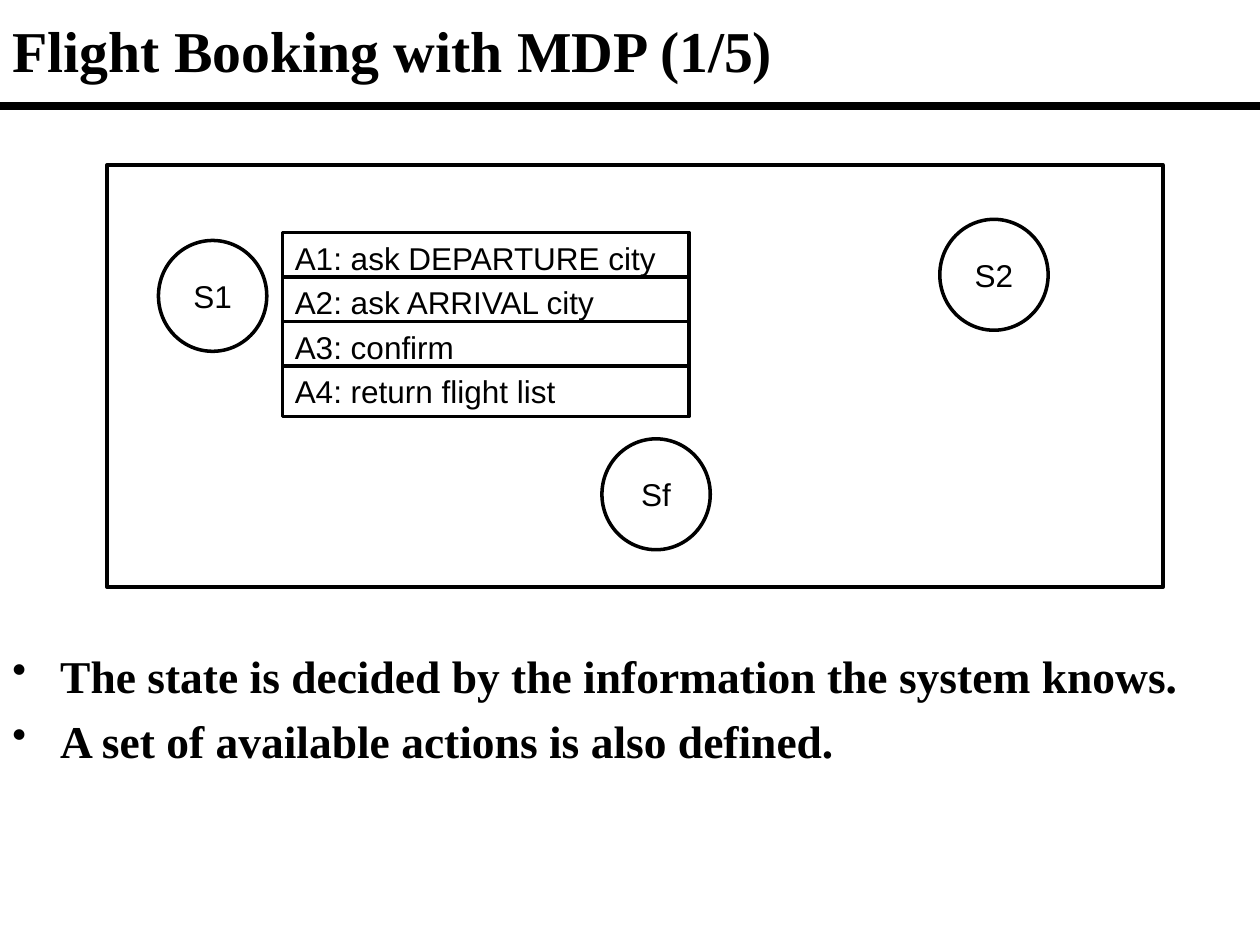
from lxml import etree
from pptx import Presentation
from pptx.dml.color import RGBColor
from pptx.enum.shapes import MSO_CONNECTOR, MSO_SHAPE
from pptx.enum.text import MSO_ANCHOR, PP_ALIGN
from pptx.oxml.ns import qn
from pptx.util import Inches, Pt

WIDTH, HEIGHT = 10, 7.5
BLACK, WHITE = "000000", "FFFFFF"
HEADING = {"name": "Times New Roman", "bold": True}
LABEL = {"name": "Arial", "size": Pt(18)}
ACTIONS = ["A1: ask DEPARTURE city", "A2: ask ARRIVAL city",
           "A3: confirm", "A4: return flight list"]
# Centre of each state, as shares of the diagram frame
STATES = {"S1": (0.1, 0.31), "Sf": (0.52, 0.78), "S2": (0.84, 0.26)}
BULLETS = ["The state is decided by the information the system knows.",
           "A set of available actions is also defined."]


def color(hex_string):
    return RGBColor.from_string(hex_string)


def write(paragraph, text, font_format):
    run = paragraph.add_run()
    run.text = text
    for name, value in font_format.items():
        setattr(run.font, name, value)
    run.font.color.rgb = color(BLACK)


def add_outlined(slide, kind, box, text="", align=PP_ALIGN.LEFT):
    shape = slide.shapes.add_shape(kind, *map(Inches, box))
    shape.shadow.inherit = False
    shape.fill.solid()
    shape.fill.fore_color.rgb = color(WHITE)
    shape.line.color.rgb = color(BLACK)
    shape.line.width = Pt(2)
    if text:
        frame = shape.text_frame
        frame.vertical_anchor = MSO_ANCHOR.MIDDLE
        frame.word_wrap = False
        frame.paragraphs[0].alignment = align
        write(frame.paragraphs[0], text, LABEL)


def add_text_frame(slide, box, anchor):
    frame = slide.shapes.add_textbox(*map(Inches, box)).text_frame
    frame.word_wrap = True
    frame.vertical_anchor = anchor
    return frame


def add_header(slide, box, rule_y):
    left, _, width, _ = box
    rule = slide.shapes.add_connector(
        MSO_CONNECTOR.STRAIGHT, Inches(left), Inches(rule_y),
        Inches(left + width), Inches(rule_y))
    rule.line.color.rgb = color(BLACK)
    rule.line.width = Pt(4.5)
    etree.SubElement(rule._element.spPr, qn("a:effectLst"))
    frame = add_text_frame(slide, box, MSO_ANCHOR.MIDDLE)
    write(frame.paragraphs[0], "Flight Booking with MDP (1/5)",
          {**HEADING, "size": Pt(33)})


def add_actions(slide, box, row_height=0.4):
    """Stack the action rows so that each slightly overlaps the one above."""
    left, top, width, height = box
    step = (height - row_height) / (len(ACTIONS) - 1)
    for row, action in enumerate(ACTIONS):
        add_outlined(slide, MSO_SHAPE.RECTANGLE,
                     (left, top + row * step, width, row_height), action)


def add_diagram(slide, box):
    left, top, width, height = box
    add_outlined(slide, MSO_SHAPE.RECTANGLE, box)
    state_width, state_height = 0.86, 0.88
    for name, (across, down) in STATES.items():
        state_box = (left + across * width - state_width / 2,
                     top + down * height - state_height / 2,
                     state_width, state_height)
        add_outlined(slide, MSO_SHAPE.OVAL, state_box, name, PP_ALIGN.CENTER)
    add_actions(slide, (left + 0.166 * width, top + 0.16 * height,
                        0.385 * width, 0.436 * height))


def add_bullets(slide, box):
    frame = add_text_frame(slide, box, MSO_ANCHOR.TOP)
    for index, text in enumerate(BULLETS):
        paragraph = frame.add_paragraph() if index else frame.paragraphs[0]
        paragraph.space_before = Pt(6)
        write(paragraph, text, {**HEADING, "size": Pt(26)})
        properties = paragraph._p.get_or_add_pPr()
        properties.set("marL", str(Inches(0.38)))
        properties.set("indent", str(Inches(-0.38)))
        etree.SubElement(properties, qn("a:buSzPct"), val="90000")
        etree.SubElement(properties, qn("a:buChar"), char="•")


def main():
    presentation = Presentation()
    presentation.slide_width = Inches(WIDTH)
    presentation.slide_height = Inches(HEIGHT)
    slide = presentation.slides.add_slide(presentation.slide_layouts[6])
    add_header(slide, (0, 0, WIDTH, 0.79), rule_y=0.84)
    add_diagram(slide, (0.85, 1.31, 8.38, 3.35))
    add_bullets(slide, (0, 5.09, WIDTH, 1.06))
    presentation.save("out.pptx")


if __name__ == "__main__":
    main()
